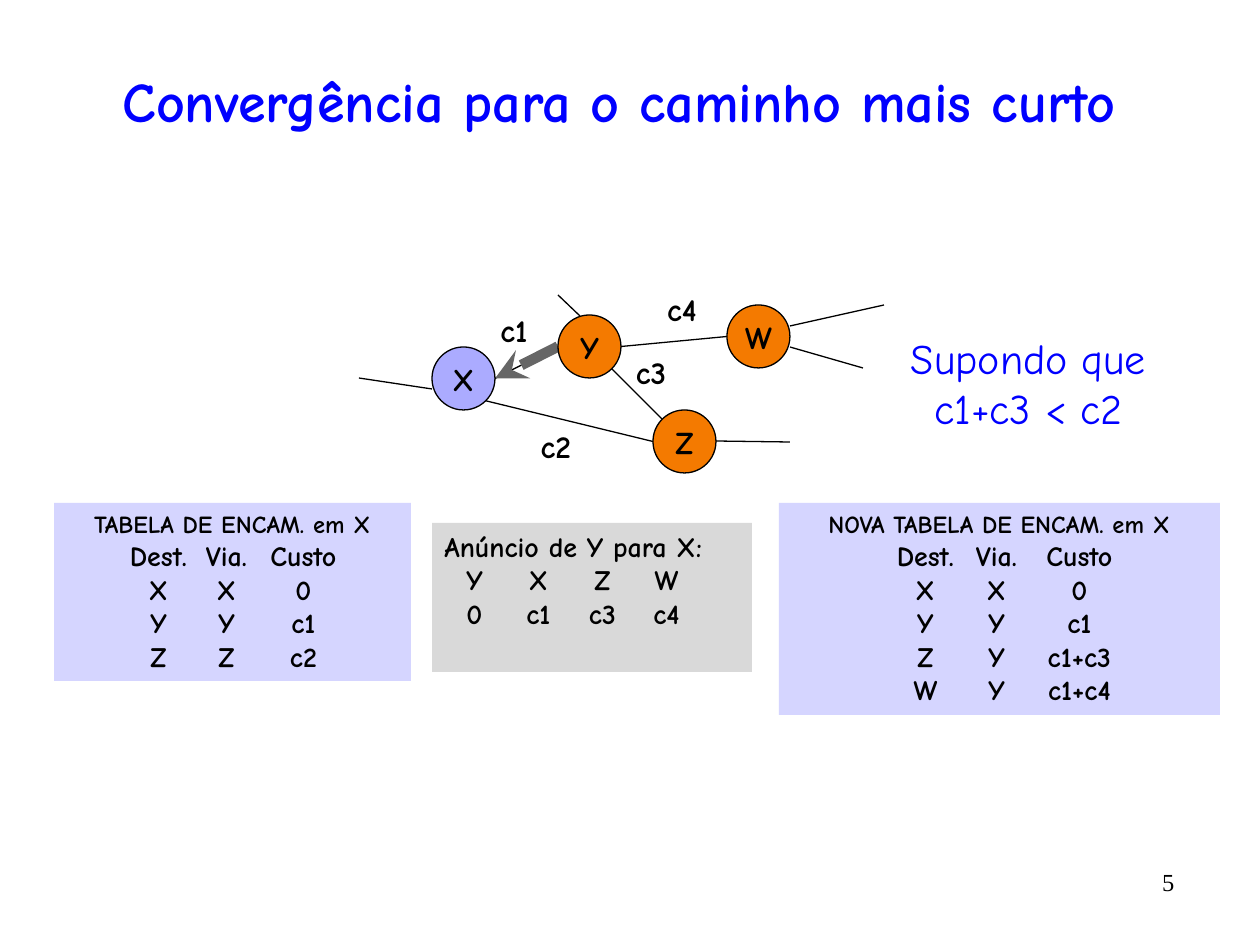
import math

from lxml import etree
from pptx import Presentation
from pptx import util as u
from pptx.dml.color import RGBColor
from pptx.enum import shapes, text
from pptx.oxml.ns import qn

BLUE = RGBColor(0x00, 0x00, 0xFF)
BLACK = RGBColor(0x00, 0x00, 0x00)
ORANGE = RGBColor(0xF4, 0x7A, 0x00)
LILAC = RGBColor(0xAB, 0xAB, 0xFF)
PALE = RGBColor(0xD5, 0xD5, 0xFF)
GREY = RGBColor(0xD9, 0xD9, 0xD9)
DARK = RGBColor(0x66, 0x66, 0x66)
LEFT, CENTER, RIGHT = text.PP_ALIGN.LEFT, text.PP_ALIGN.CENTER, text.PP_ALIGN.RIGHT
NODE = 63  # node diameter


def px(n):
    return u.Emu(round(n * 914400 / 126))


class Deck:
    font = "Comic Neue"

    def __init__(self, w, h):
        self.prs = Presentation()
        self.prs.slide_width, self.prs.slide_height = px(w), px(h)
        self.s = self.prs.slides.add_slide(self.prs.slide_layouts[5])

    def style(self, p, size, color=BLACK, bold=True, align=CENTER, font=None):
        p.alignment = align
        for r in p.runs:
            f = r.font
            f.name, f.size, f.bold = font or self.font, u.Pt(size), bold
            f.color.rgb = color

    def title(self, x, y, w, h, words):
        sp = self.s.shapes.title
        sp.left, sp.top, sp.width, sp.height = map(px, (x, y, w, h))
        sp.text_frame.text = words
        sp.text_frame.vertical_anchor = text.MSO_ANCHOR.MIDDLE
        self.style(sp.text_frame.paragraphs[0], 32, BLUE)

    def label(self, x, y, w, h, words, size=18, **look):
        tf = self.s.shapes.add_textbox(*map(px, (x, y, w, h))).text_frame
        tf.text = words
        tf.word_wrap = False
        for p in tf.paragraphs:
            self.style(p, size, **look)

    def shape(self, kind, x, y, w, h, fill):
        sp = self.s.shapes.add_shape(kind, *map(px, (x, y, w, h)))
        sp.shadow.inherit = False
        sp.fill.solid()
        sp.fill.fore_color.rgb = fill
        return sp

    def node(self, x, y, name, fill):
        sp = self.shape(shapes.MSO_SHAPE.OVAL, x, y, NODE, NODE, fill)
        sp.line.color.rgb, sp.line.width = BLACK, u.Pt(0.75)
        sp.text_frame.text = name
        sp.text_frame.word_wrap = False
        self.style(sp.text_frame.paragraphs[0], 18)

    def line(self, start, end, color=BLACK, width=0.75, arrow=False):
        c = self.s.shapes.add_connector(
            shapes.MSO_CONNECTOR.STRAIGHT, *map(px, (*start, *end)))
        c.line.color.rgb, c.line.width = color, u.Pt(width)
        if arrow:
            etree.SubElement(c.line._get_or_add_ln(), qn("a:headEnd"), type="stealth")
        etree.SubElement(c._element.spPr, qn("a:effectLst"))

    def panel(self, x, y, w, h, fill, heading, rows, stops, size, align):
        """Box with a heading and rows set on centred tab stops."""
        sp = self.shape(shapes.MSO_SHAPE.RECTANGLE, x, y, w, h, fill)
        sp.line.fill.background()
        tf = sp.text_frame
        tf.word_wrap = True
        tf.vertical_anchor = text.MSO_ANCHOR.TOP
        tf.text = heading
        self.style(tf.paragraphs[0], size, align=align)
        for row in rows:
            p = tf.add_paragraph()
            p.text = "".join("\t" + cell for cell in row.split())
            self.style(p, 16, align=LEFT)
            tabs = etree.SubElement(p._p.get_or_add_pPr(), qn("a:tabLst"))
            for stop in stops:
                etree.SubElement(tabs, qn("a:tab"), pos=str(px(stop)), algn="ctr")


NODES = {"Y": (558, 315, ORANGE), "Z": (653, 410, ORANGE),
         "W": (727, 305, ORANGE), "X": (432, 347, LILAC)}


def edge(name, angle):
    """Point on a node's outline, clockwise from its right side."""
    x, y, _ = NODES[name]
    a, r = math.radians(angle), NODE / 2
    return x + r + r * math.cos(a), y + r + r * math.sin(a)


def main():
    d = Deck(1260, 945)
    d.title(42, 53, 1155, 95, "Convergência para o caminho mais curto")
    d.label(1061, 861, 126, 53, "5", 14, bold=False, align=RIGHT,
            font="Times New Roman")

    # Links between nodes
    link = edge("X", 0), edge("Y", 180)
    d.line(*link)
    d.line(edge("Y", 45), edge("Z", 225))
    d.line(edge("X", 45), edge("Z", 180))
    d.line(edge("Y", 0), edge("W", 180))

    # Links to the rest of the network
    for start, end in [((359, 378), (432, 389)), ((790, 326), (884, 305)),
                       ((790, 347), (863, 368)), ((716, 441), (790, 442)),
                       ((558, 295), (580, 316))]:
        d.line(start, end)

    # Announcement from Y to X
    d.line(*link, color=DARK, width=6, arrow=True)

    # Nodes and link costs
    for name, (x, y, fill) in NODES.items():
        d.node(x, y, name, fill)
    for cost, x, y in [("c1", 483, 305), ("c3", 620, 347),
                       ("c2", 525, 421), ("c4", 651, 284)]:
        d.label(x, y, 62, 50, cost)
    d.label(893, 326, 271, 115, "Supondo que\nc1+c3 < c2", 24,
            color=BLUE, bold=False)

    # Routing tables and announcement
    header = "Dest. Via. Custo"
    d.panel(54, 503, 357, 178, PALE, "TABELA DE ENCAM. em X",
            [header, "X X 0", "Y Y c1", "Z Z c2"], (92, 160, 237), 14, CENTER)
    d.panel(432, 523, 320, 149, GREY, "Anúncio de Y para X:",
            ["Y X Z W", "0 c1 c3 c4"], range(30, 250, 64), 16, LEFT)
    d.panel(779, 503, 441, 212, PALE, "NOVA TABELA DE ENCAM. em X",
            [header, "X X 0", "Y Y c1", "Z Y c1+c3", "W Y c1+c4"],
            (134, 205, 288), 14, CENTER)

    d.prs.save("out.pptx")


if __name__ == "__main__":
    main()
